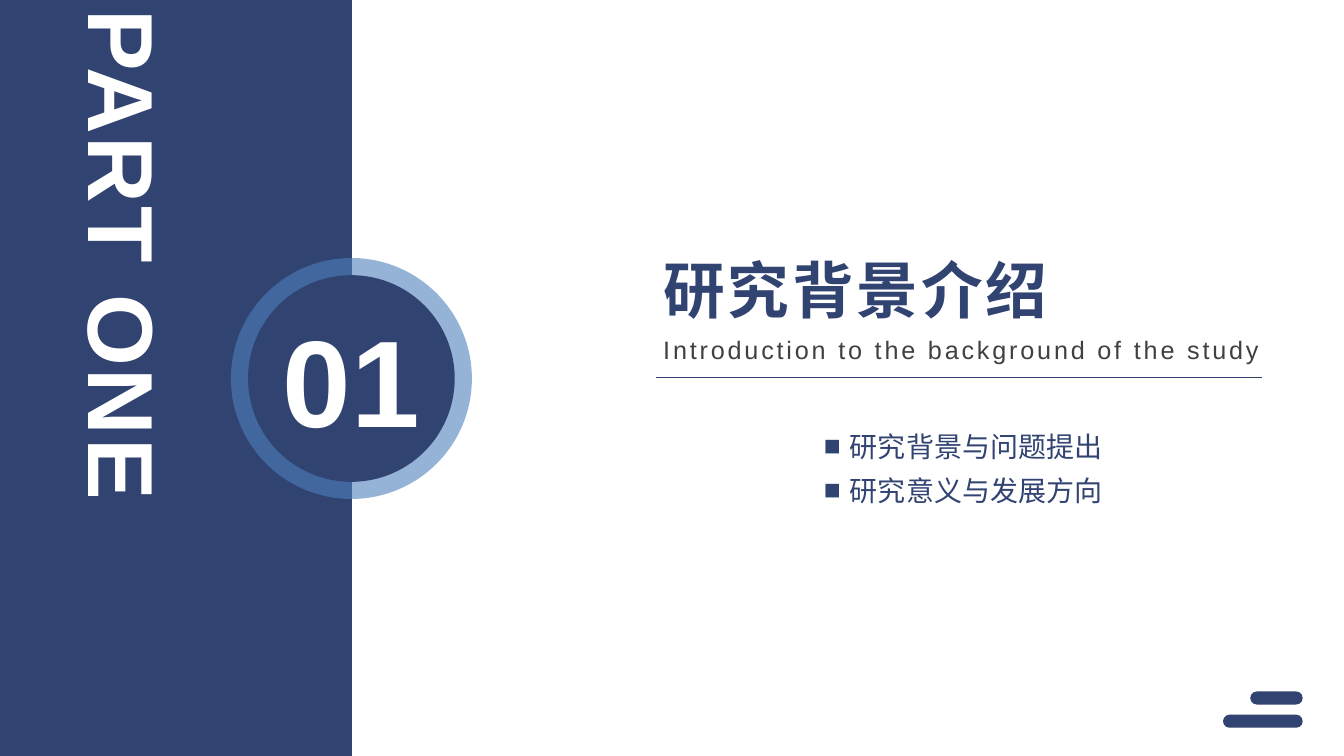
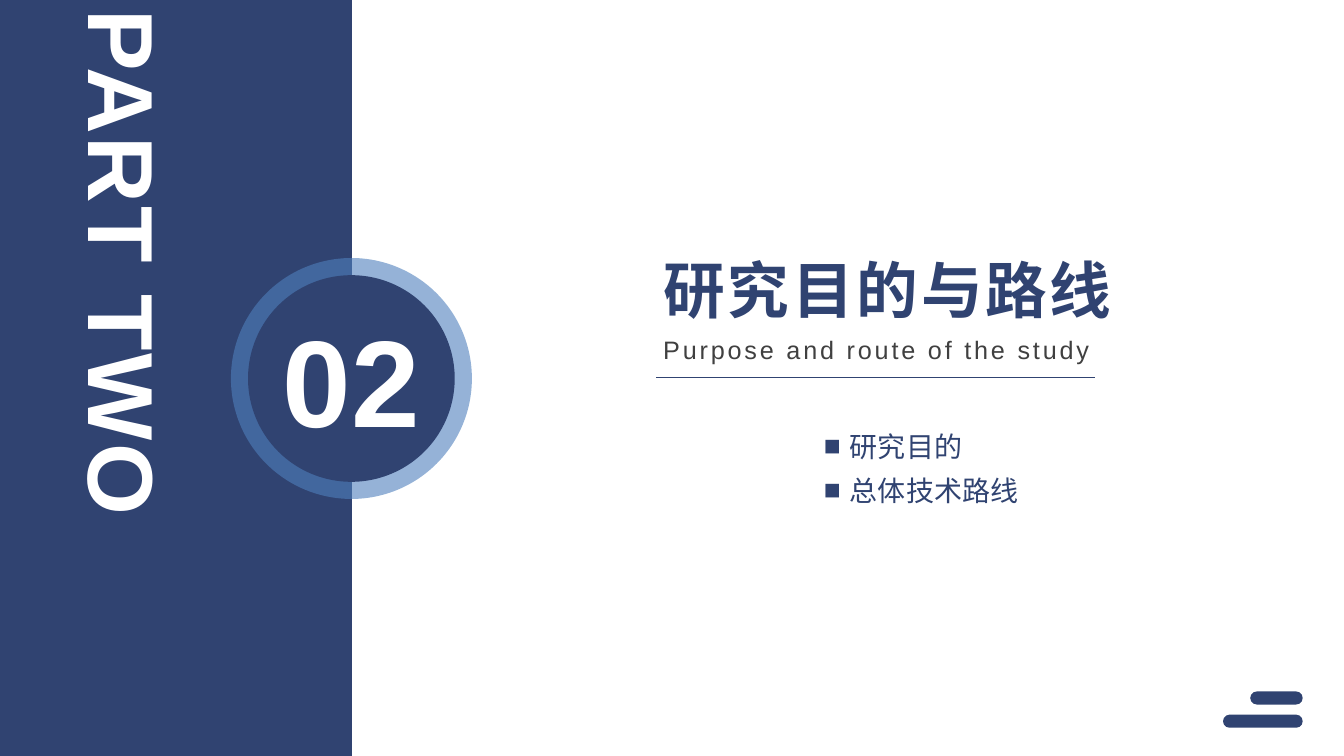
from collections import namedtuple

from lxml.etree import SubElement
from pptx import Presentation
from pptx.dml.color import RGBColor
from pptx.enum.shapes import MSO_CONNECTOR, MSO_SHAPE
from pptx.enum.text import MSO_ANCHOR, MSO_AUTO_SIZE, PP_ALIGN
from pptx.oxml.ns import qn
from pptx.util import Inches, Pt

NAVY = "304371"
RING_BLUE = "4F80BD"
GRAY = "404040"
WHITE = "FFFFFF"
FONT = "Arial"

Box = namedtuple("Box", "left top width height")
Section = namedtuple("Section", "number label title subtitle rule_width topics")

BAND = Box(0, 0, 3.49, 7.5)
BADGE = Box(2.29, 2.56, 2.39, 2.39)
HEADING = Box(6.48, 2.45, 6.6, 1.3)
TOPICS = Box(8.07, 4.11, 4, 0.93)
ORNAMENT = Box(12.13, 6.86, 0.79, 0.36)

SECTIONS = [
    Section("01", "PART ONE", "研究背景介绍",
            "Introduction to the background of the study", 6.01,
            ["研究背景与问题提出", "研究意义与发展方向"]),
    Section("02", "PART TWO", "研究目的与路线",
            "Purpose and route of the study", 4.35,
            ["研究目的", "总体技术路线"]),
]


def color(value):
    return RGBColor.from_string(value)


def inches(box):
    return [Inches(length) for length in box]


def place(shape, box):
    shape.left, shape.top, shape.width, shape.height = inches(box)


def add_filled(shapes, kind, box, fill, opacity=100):
    shape = shapes.add_shape(kind, *inches(box))
    shape.shadow.inherit = False
    shape.fill.solid()
    shape.fill.fore_color.rgb = color(fill)
    shape.line.fill.background()
    if opacity < 100:
        fill_color = shape._element.spPr.find(qn("a:solidFill"))[0]
        SubElement(fill_color, qn("a:alpha"), val=str(opacity * 1000))
    return shape


def prepare_frame(shape, anchor=MSO_ANCHOR.TOP, wrap=True):
    frame = shape.text_frame
    frame.word_wrap = wrap
    frame.auto_size = MSO_AUTO_SIZE.NONE
    frame.vertical_anchor = anchor
    return frame


def add_run(paragraph, text, size, text_color, bold=False, spacing=0):
    run = paragraph.add_run()
    run.text = text
    run.font.name = FONT
    run.font.size = Pt(size)
    run.font.bold = bold
    run.font.color.rgb = color(text_color)
    if spacing:
        run._r.get_or_add_rPr().set("spc", str(spacing * 100))


def add_bullet(paragraph, indent):
    properties = paragraph._p.get_or_add_pPr()
    properties.set("marL", str(Inches(indent)))
    properties.set("indent", str(-Inches(indent)))
    bullet_color = SubElement(properties, qn("a:buClr"))
    SubElement(bullet_color, qn("a:srgbClr"), val=NAVY)
    SubElement(properties, qn("a:buFont"), typeface=FONT)
    SubElement(properties, qn("a:buChar"), char="■")


def add_band(slide, box, label):
    add_filled(slide.shapes, MSO_SHAPE.RECTANGLE, box, NAVY)
    label_box = Box(box.left + 0.53, box.top, 1.31, box.height)
    label_shape = slide.shapes.add_textbox(*inches(label_box))
    frame = prepare_frame(label_shape)
    label_shape._element.txBody.bodyPr.set("vert", "eaVert")
    paragraph = frame.paragraphs[0]
    paragraph.alignment = PP_ALIGN.CENTER
    add_run(paragraph, label, 66, WHITE, True, 2)


def add_badge(slide, box, number):
    ring = 0.17
    disc_box = Box(box.left + ring, box.top + ring,
                   box.width - 2 * ring, box.height - 2 * ring)
    add_filled(slide.shapes, MSO_SHAPE.OVAL, box, RING_BLUE, 60)
    disc = add_filled(slide.shapes, MSO_SHAPE.OVAL, disc_box, NAVY)
    frame = prepare_frame(disc, MSO_ANCHOR.MIDDLE, False)
    frame.margin_left = frame.margin_right = 0
    frame.margin_top = frame.margin_bottom = 0
    paragraph = frame.paragraphs[0]
    paragraph.alignment = PP_ALIGN.CENTER
    add_run(paragraph, number, 88, WHITE, True)


def add_heading(slide, box, section):
    title = slide.shapes.title
    place(title, Box(box.left, box.top, box.width, 0.84))
    paragraph = prepare_frame(title, MSO_ANCHOR.MIDDLE).paragraphs[0]
    paragraph.alignment = PP_ALIGN.LEFT
    add_run(paragraph, section.title, 44, NAVY, True, 2)

    subtitle_box = Box(box.left, box.top + 0.82, box.width, 0.4)
    subtitle = slide.shapes.add_textbox(*inches(subtitle_box))
    paragraph = prepare_frame(subtitle).paragraphs[0]
    add_run(paragraph, section.subtitle, 18, GRAY, spacing=2)

    start = box.left + 0.03
    bottom = Inches(box.top + 1.29)
    rule = slide.shapes.add_connector(
        MSO_CONNECTOR.STRAIGHT, Inches(start), bottom,
        Inches(start + section.rule_width), bottom)
    rule.line.color.rgb = color(NAVY)
    rule.line.width = Pt(0.5)
    SubElement(rule._element.spPr, qn("a:effectLst"))


def add_topics(slide, box, topics):
    body = slide.placeholders[1]
    place(body, box)
    frame = prepare_frame(body)
    for index, topic in enumerate(topics):
        paragraph = frame.add_paragraph() if index else frame.paragraphs[0]
        add_bullet(paragraph, 0.26)
        paragraph.line_spacing = 1.3
        paragraph.space_before = Pt(0)
        add_run(paragraph, topic, 20, NAVY)


def add_ornament(slide, box):
    thickness = 0.13
    group = slide.shapes.add_group_shape()
    for width, top in ((box.width, box.top + box.height - thickness),
                       (0.52, box.top)):
        bar_box = Box(box.left + box.width - width, top, width, thickness)
        bar = add_filled(group.shapes, MSO_SHAPE.ROUNDED_RECTANGLE, bar_box, NAVY)
        bar.adjustments[0] = 0.5


def add_section_slide(presentation, section):
    slide = presentation.slides.add_slide(presentation.slide_layouts[1])
    add_band(slide, BAND, section.label)
    add_badge(slide, BADGE, section.number)
    add_heading(slide, HEADING, section)
    add_topics(slide, TOPICS, section.topics)
    add_ornament(slide, ORNAMENT)


def main():
    presentation = Presentation()
    presentation.slide_width = Inches(13.33)
    presentation.slide_height = Inches(7.5)
    for section in SECTIONS:
        add_section_slide(presentation, section)
    presentation.save("out.pptx")


if __name__ == "__main__":
    main()
